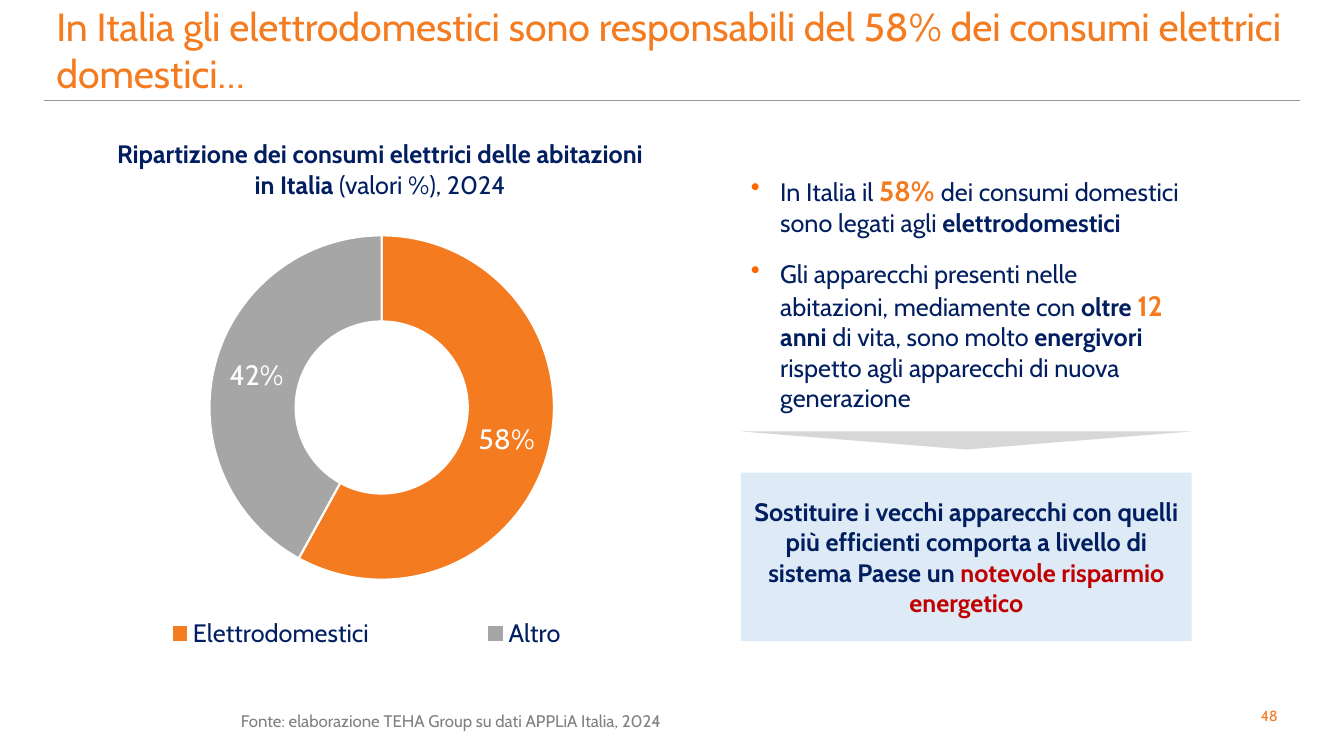
from lxml import etree
from pptx import Presentation
from pptx.chart.data import CategoryChartData
from pptx.dml.color import RGBColor
from pptx.enum.chart import XL_CHART_TYPE, XL_LEGEND_POSITION
from pptx.enum.shapes import MSO_CONNECTOR, MSO_SHAPE
from pptx.enum.text import MSO_ANCHOR, PP_ALIGN
from pptx.oxml import parse_xml
from pptx.oxml.ns import nsdecls, qn
from pptx.util import Inches, Pt

DOUGHNUT = XL_CHART_TYPE.DOUGHNUT
LEGEND_RIGHT = XL_LEGEND_POSITION.RIGHT
STRAIGHT = MSO_CONNECTOR.STRAIGHT
RECTANGLE, TRIANGLE = MSO_SHAPE.RECTANGLE, MSO_SHAPE.ISOSCELES_TRIANGLE
TOP, MIDDLE = MSO_ANCHOR.TOP, MSO_ANCHOR.MIDDLE
LEFT, CENTER = PP_ALIGN.LEFT, PP_ALIGN.CENTER

FONT = "Cabin"
ORANGE = RGBColor(0xF4, 0x7B, 0x20)
NAVY = RGBColor(0x00, 0x1E, 0x60)
RED = RGBColor(0xC0, 0x00, 0x00)
WHITE = RGBColor(0xFF, 0xFF, 0xFF)
SLICE_GRAY = RGBColor(0xA6, 0xA6, 0xA6)
RULE_GRAY = RGBColor(0x96, 0x96, 0x96)
SOURCE_GRAY = RGBColor(0x80, 0x80, 0x80)
ARROW_GRAY = RGBColor(0xD7, 0xD7, 0xD7)
PALE_BLUE = RGBColor(0xDE, 0xEB, 0xF7)

# Left edge and width shared by the right-hand column
COLUMN_LEFT, COLUMN_WIDTH = 7.35, 4.47


def style_font(font, size, color, bold=False):
    font.name = FONT
    font.size = Pt(size)
    font.bold = bold
    font.color.rgb = color


def add_spans(para, spans):
    """Each span is (text, size, color, bold)."""
    for text, size, color, bold in spans:
        span = para.add_run()
        span.text = text
        style_font(span.font, size, color, bold)


def add_text(page, left, top, width, height, spans, align=LEFT, anchor=TOP):
    box = page.shapes.add_textbox(Inches(left), Inches(top), Inches(width), Inches(height))
    frame = box.text_frame
    frame.word_wrap = True
    frame.vertical_anchor = anchor
    frame.paragraphs[0].alignment = align
    add_spans(frame.paragraphs[0], spans)
    return box


def add_block(page, preset, top, height, color):
    block = page.shapes.add_shape(
        preset, Inches(COLUMN_LEFT), Inches(top), Inches(COLUMN_WIDTH), Inches(height))
    block.shadow.inherit = False
    block.fill.solid()
    block.fill.fore_color.rgb = color
    block.line.fill.background()
    return block


def add_rule(page, left, right, top):
    rule = page.shapes.add_connector(
        STRAIGHT, Inches(left), Inches(top), Inches(right), Inches(top))
    rule.line.color.rgb = RULE_GRAY
    rule.line.width = Pt(0.75)
    etree.SubElement(rule._element.spPr, qn("a:effectLst"))


def set_bullet(para):
    props = para._p.get_or_add_pPr()
    props.set("marL", str(Inches(0.29)))
    props.set("indent", str(-Inches(0.29)))
    for xml in (f'<a:buClr {nsdecls("a")}><a:srgbClr val="FF6600"/></a:buClr>',
                f'<a:buSzPct {nsdecls("a")} val="105000"/>',
                f'<a:buChar {nsdecls("a")} char="•"/>'):
        props.append(parse_xml(xml))


def add_bullets(page, top, height, items):
    box = add_text(page, COLUMN_LEFT, top, COLUMN_WIDTH, height, [])
    frame = box.text_frame
    for index, spans in enumerate(items):
        para = frame.add_paragraph() if index else frame.paragraphs[0]
        set_bullet(para)
        para.space_before = Pt(7.4 if index else 0)
        para.space_after = Pt(7.4)
        add_spans(para, spans)


def chart_layout(x, y, width, height, inner=False):
    target = '<c:layoutTarget val="inner"/>' if inner else ""
    return parse_xml(
        f'<c:layout {nsdecls("c")}><c:manualLayout>{target}'
        '<c:xMode val="edge"/><c:yMode val="edge"/>'
        f'<c:x val="{x}"/><c:y val="{y}"/><c:w val="{width}"/><c:h val="{height}"/>'
        '</c:manualLayout></c:layout>')


def add_doughnut(page, left, top, width, height, shares):
    data = CategoryChartData()
    data.categories = [name for name, _, _ in shares]
    data.add_series("Consumi", [value for _, value, _ in shares])
    chart = page.shapes.add_chart(
        DOUGHNUT, Inches(left), Inches(top), Inches(width), Inches(height), data).chart
    chart.has_title = False
    style_font(chart.font, 18, NAVY)

    # Slices
    plot = chart.plots[0]
    plot.vary_by_categories = True
    for index, (_, _, color) in enumerate(shares):
        point = plot.series[0].points[index]
        point.format.fill.solid()
        point.format.fill.fore_color.rgb = color
        point.format.line.color.rgb = WHITE
        point.format.line.width = Pt(1.5)

    # Labels
    plot.has_data_labels = True
    labels = plot.data_labels
    labels.show_value = True
    labels.show_percentage = False
    labels.number_format = '0"%"'
    labels.number_format_is_linked = False
    style_font(labels.font, 20, WHITE)

    # Legend spread across the foot of the chart
    chart.has_legend = True
    legend = chart.legend
    legend.position = LEGEND_RIGHT
    legend.include_in_layout = False
    style_font(legend.font, 18, NAVY)
    legend_xml = legend._element
    for old in legend_xml.findall(qn("c:layout")):
        legend_xml.remove(old)
    legend_xml.find(qn("c:legendPos")).addnext(chart_layout(0, 0.89, 1, 0.11))

    # Ring position
    area = chart._chartSpace.chart.plotArea
    for old in area.findall(qn("c:layout")):
        area.remove(old)
    area.insert(0, chart_layout(0.24, 0.02, 0.57, 0.8, inner=True))


def main():
    deck = Presentation()
    deck.slide_width, deck.slide_height = Inches(13.33), Inches(7.5)
    page = deck.slides.add_slide(deck.slide_layouts[6])

    # Heading and page number
    add_rule(page, 0.44, 12.89, 1)
    add_text(page, 12.36, 6.96, 0.46, 0.29, [("48", 10.5, ORANGE, False)], CENTER)
    add_text(page, 0.46, 0, 12.41, 0.98, [
        ("In Italia gli elettrodomestici sono responsabili del 58% "
         "dei consumi elettrici domestici…", 28, ORANGE, False)], anchor=MIDDLE)

    # Chart column
    add_text(page, 0.99, 1.32, 5.56, 0.71, [
        ("Ripartizione dei consumi elettrici delle abitazioni in Italia ", 18, NAVY, True),
        ("(valori %), 2024", 18, NAVY, False)], CENTER, MIDDLE)
    add_doughnut(page, 0.61, 2.25, 6.05, 4.27, [
        ("Elettrodomestici", 58, ORANGE), ("Altro", 42, SLICE_GRAY)])

    # Findings
    add_bullets(page, 1.67, 2.51, [
        [("In Italia il ", 18, NAVY, False),
         ("58% ", 20, ORANGE, True),
         ("dei consumi domestici sono legati agli ", 18, NAVY, False),
         ("elettrodomestici", 18, NAVY, True)],
        [("Gli apparecchi presenti nelle abitazioni, mediamente con ", 18, NAVY, False),
         ("oltre ", 18, NAVY, True),
         ("12 ", 20, ORANGE, True),
         ("anni ", 18, NAVY, True),
         ("di vita, sono molto ", 18, NAVY, False),
         ("energivori", 18, NAVY, True),
         (" rispetto agli apparecchi di nuova generazione", 18, NAVY, False)]])

    # Conclusion under the downward arrow
    add_block(page, TRIANGLE, 4.28, 0.18, ARROW_GRAY).rotation = 180
    conclusion = add_block(page, RECTANGLE, 4.69, 1.67, PALE_BLUE).text_frame
    conclusion.word_wrap = True
    conclusion.vertical_anchor = MIDDLE
    conclusion.paragraphs[0].alignment = CENTER
    add_spans(conclusion.paragraphs[0], [
        ("Sostituire i vecchi apparecchi con quelli più efficienti comporta "
         "a livello di sistema Paese un ", 18, NAVY, True),
        ("notevole risparmio energetico", 18, RED, True)])

    # Source line
    add_text(page, 2.29, 7, 7.98, 0.33, [
        ("Fonte: elaborazione TEHA Group su dati APPLiA Italia, 2024",
         12, SOURCE_GRAY, False)])

    deck.save("out.pptx")


if __name__ == "__main__":
    main()
